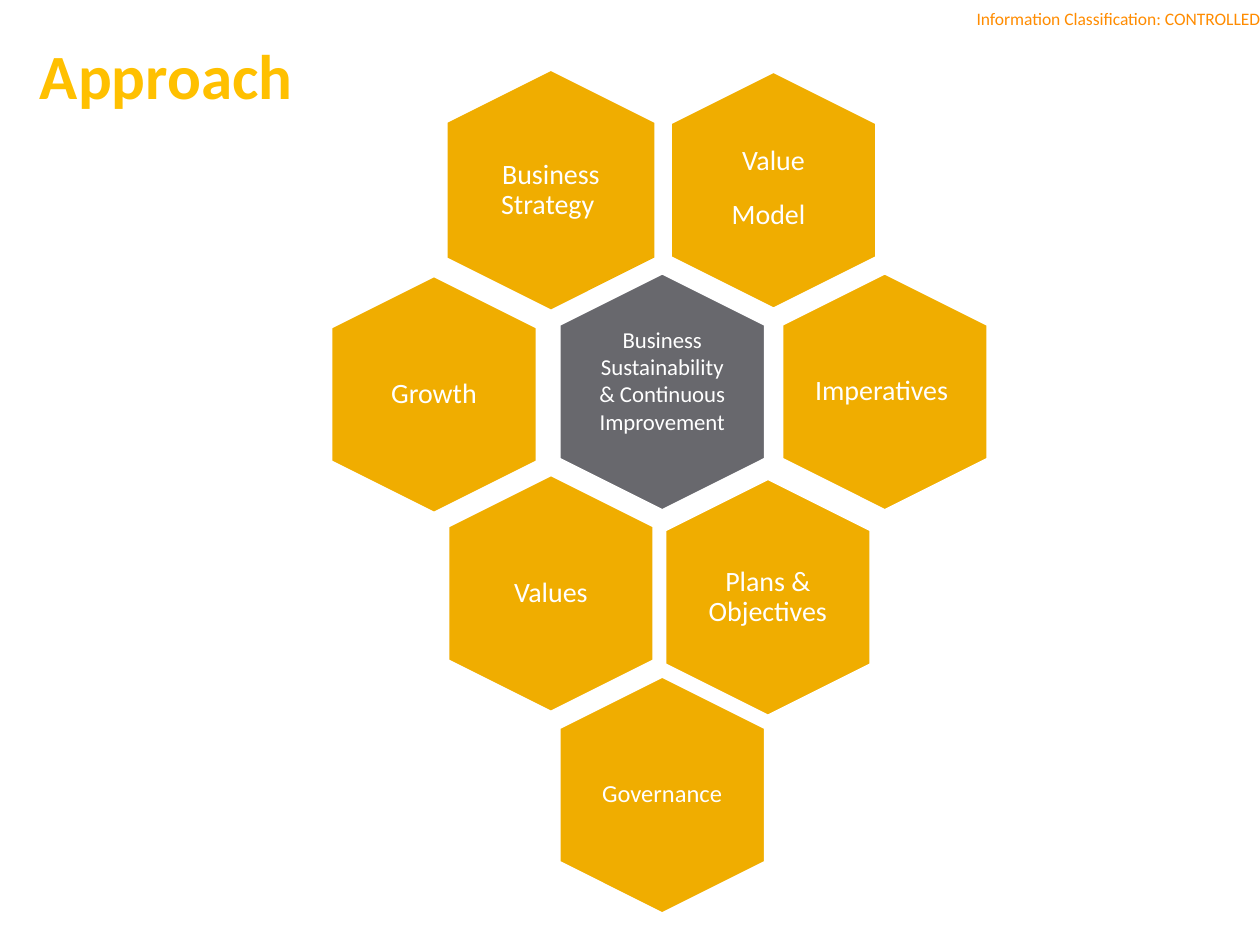
from dataclasses import dataclass

from pptx import Presentation
from pptx.dml.color import RGBColor
from pptx.enum.shapes import MSO_SHAPE as Shape
from pptx.enum.text import MSO_ANCHOR as Anchor, PP_ALIGN as Align
from pptx.util import Pt


@dataclass(frozen=True)
class Theme:
    font: str = "Calibri"
    gold: str = "F0AD00"
    grey: str = "68686D"
    white: str = "FFFFFF"
    title: str = "FFC000"
    marking: str = "FF8C00"
    title_size: float = 36
    marking_size: float = 10
    label_size: float = 16
    small_label_size: float = 14
    core_size: float = 13
    spacer_size: float = 25


THEME = Theme()

# Honeycomb: centre of the core cell, half-column and row steps, cell sizes
CORE_X, CORE_Y = 378.4, 223.9
STEP_X, STEP_Y = 63.6, 115.2
HEX_WIDTH, HEX_HEIGHT = 136.1, 118.1
LABEL_WIDTH, LABEL_HEIGHT = 81.4, 93.6


def color(value):
    return RGBColor.from_string(value)


def style_font(font, size, tint, bold=False):
    font.name = THEME.font
    font.size = Pt(size)
    font.bold = bold
    font.color.rgb = color(tint)


def add_text_box(page, left, top, width, height, insets, anchor):
    """Add an empty text box; insets are left, top, right, bottom."""
    box = page.shapes.add_textbox(Pt(left), Pt(top), Pt(width), Pt(height))
    frame = box.text_frame
    frame.word_wrap = True
    frame.vertical_anchor = anchor
    (frame.margin_left, frame.margin_top,
     frame.margin_right, frame.margin_bottom) = map(Pt, insets)
    return frame


def add_heading(page):
    frame = add_text_box(page, 15.8, 17.3, 679, 42.5, (7.2, 3.6, 7.2, 3.6), Anchor.TOP)
    para = frame.paragraphs[0]
    para.text = "Approach"
    style_font(para.font, THEME.title_size, THEME.title, bold=True)


def add_marking(page):
    frame = add_text_box(page, 530.6, 0, 189.4, 20.9, (0, 0, 0, 0), Anchor.MIDDLE)
    para = frame.paragraphs[0]
    para.text = "Information Classification: CONTROLLED"
    para.alignment = Align.RIGHT
    style_font(para.font, THEME.marking_size, THEME.marking)


def cell_center(column, row, shift=(0, 0)):
    return CORE_X + column * STEP_X + shift[0], CORE_Y + row * STEP_Y + shift[1]


def add_hexagon(page, center, fill, outlined=True):
    x, y = center
    cell = page.shapes.add_shape(
        Shape.HEXAGON, Pt(x - HEX_WIDTH / 2), Pt(y - HEX_HEIGHT / 2),
        Pt(HEX_WIDTH), Pt(HEX_HEIGHT))
    cell.rotation = 90
    cell.adjustments[0] = 0.25
    cell.shadow.inherit = False
    cell.fill.solid()
    cell.fill.fore_color.rgb = color(fill)
    if outlined:
        cell.line.color.rgb = color(THEME.white)
        cell.line.width = Pt(2)
    else:
        cell.line.fill.background()


def add_label(page, center, lines, size, insets=(0, 0, 0, 0), line_spacing=0.9):
    x, y = center
    frame = add_text_box(page, x - LABEL_WIDTH / 2, y - LABEL_HEIGHT / 2,
                         LABEL_WIDTH, LABEL_HEIGHT, insets, Anchor.MIDDLE)
    for index, line in enumerate(lines):
        para = frame.add_paragraph() if index else frame.paragraphs[0]
        para.text = line
        para.alignment = Align.CENTER
        para.line_spacing = line_spacing
        if line_spacing < 1:
            para.space_after = Pt(0.35 * size)
        style_font(para.font, size, THEME.white)
    return frame


def add_cell(page, center, text, size=THEME.label_size, outlined=True):
    add_hexagon(page, center, THEME.gold, outlined)
    add_label(page, center, [text], size)


def add_value_model(page, center):
    add_hexagon(page, center, THEME.gold)
    frame = add_label(page, center, ["Value", "Model"], THEME.label_size, (5, 5, 5, 5))
    # The larger trailing space sets the height of the second line
    span = frame.paragraphs[1].add_run()
    span.text = " "
    span.font.size = Pt(THEME.spacer_size)


def add_core(page, center):
    add_hexagon(page, center, THEME.grey)
    add_label(page, center, ["Business Sustainability & Continuous Improvement"],
              THEME.core_size, (3.6, 3.6, 3.6, 17), line_spacing=1)


def main():
    deck = Presentation()
    deck.slide_width, deck.slide_height = Pt(720), Pt(540)
    page = deck.slides.add_slide(deck.slide_layouts[6])
    add_marking(page)
    add_heading(page)
    add_value_model(page, cell_center(1, -1))
    add_cell(page, cell_center(-1, -1), "Business Strategy ", outlined=False)
    add_core(page, cell_center(0, 0))
    add_cell(page, cell_center(2, 0), "Imperatives ")
    add_cell(page, cell_center(-2, 0, (-3.2, 1.5)), "Growth")
    add_cell(page, cell_center(-1, 1), "Values")
    add_cell(page, cell_center(0, 2), "Governance", THEME.small_label_size)
    add_cell(page, cell_center(1, 1, (-3.2, 2.2)), "Plans & Objectives")
    deck.save("out.pptx")


if __name__ == "__main__":
    main()
